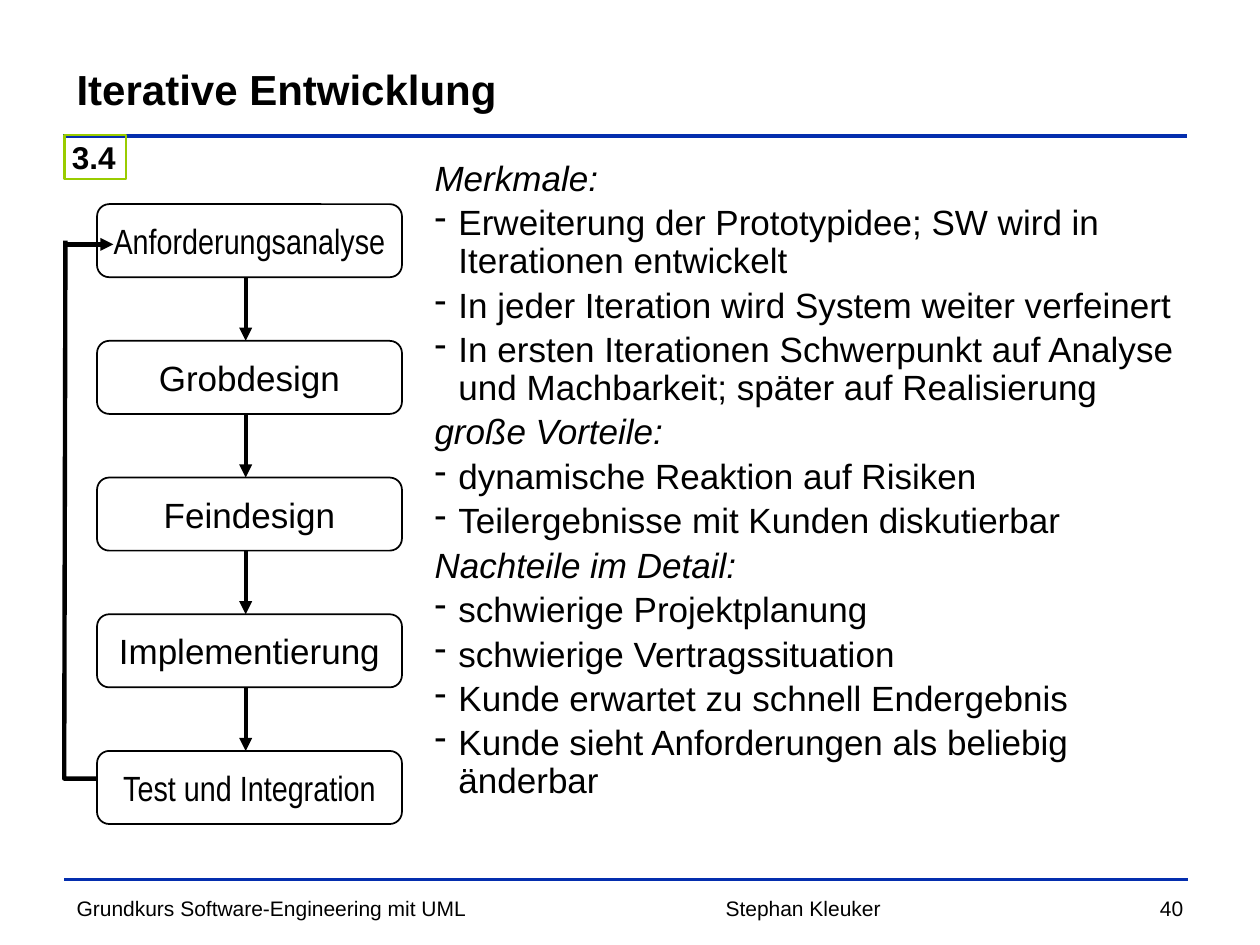
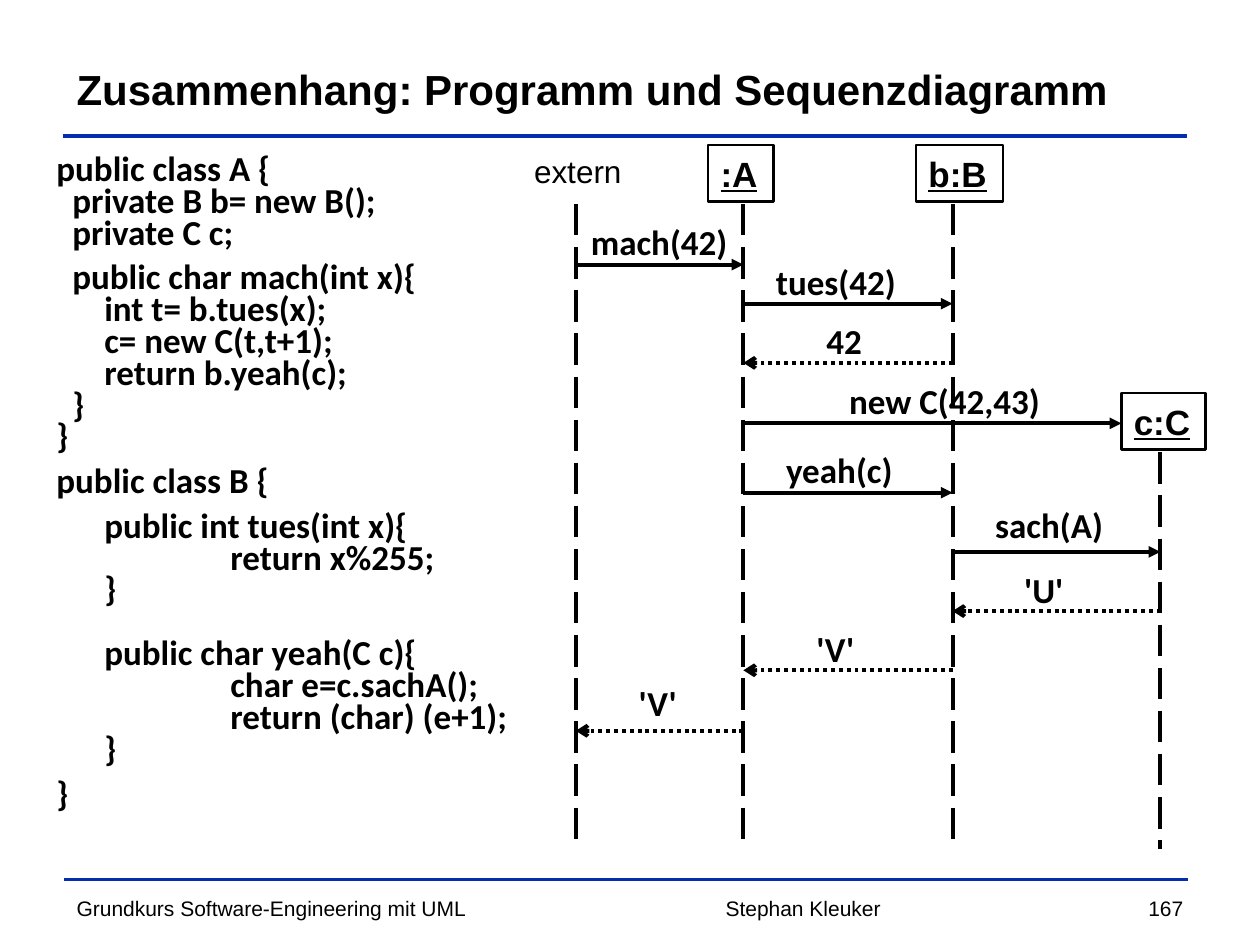
from collections import namedtuple
from lxml.etree import SubElement
from pptx import Presentation
from pptx.dml.color import RGBColor
from pptx.enum.dml import MSO_LINE
from pptx.enum.shapes import MSO_CONNECTOR, MSO_SHAPE
from pptx.enum.text import MSO_ANCHOR, PP_ALIGN
from pptx.oxml.ns import qn
from pptx.util import Inches, Pt

BLACK = RGBColor(0x00, 0x00, 0x00)
BLUE = RGBColor(0x04, 0x2E, 0xAE)
GREEN = RGBColor(0x99, 0xCC, 0x00)
WIDTH, HEIGHT = Inches(10), Inches(7.5)
UNIT = WIDTH / 100
GAP = 3.8

Box = namedtuple("Box", "x y w h")
TITLE = Box(5.1, 2.8, 89, 8.5)
FOOTER = Box(5.1, 70.6, 89.8, 2.9)
STEPS = Box(7.7, 16.2, 24.2, 49.2)
POINTS = Box(33.5, 12.3, 61.5, 57.5)
CODE = Box(3.5, 12.3, 45, 57.5)
CHART = Box(41.4, 11.5, 54.3, 55.9)

FLOW = [
    ("Anforderungsanalyse", "Arial Narrow"),
    ("Grobdesign", "Arial"),
    ("Feindesign", "Arial"),
    ("Implementierung", "Arial"),
    ("Test und Integration", "Arial Narrow"),
]

TRAITS = [
    ("Merkmale:", [
        "Erweiterung der Prototypidee; SW wird in Iterationen entwickelt",
        "In jeder Iteration wird System weiter verfeinert",
        "In ersten Iterationen Schwerpunkt auf Analyse und Machbarkeit; später auf Realisierung",
    ]),
    ("große Vorteile:", [
        "dynamische Reaktion auf Risiken",
        "Teilergebnisse mit Kunden diskutierbar",
    ]),
    ("Nachteile im Detail:", [
        "schwierige Projektplanung",
        "schwierige Vertragssituation",
        "Kunde erwartet zu schnell Endergebnis",
        "Kunde sieht Anforderungen als beliebig änderbar",
    ]),
]

INDENTS = [0, 1.26, 3.8, 13.8]
SMALL, LARGE = 11.1, 22.2
LINES = [
    (0, GAP, "public class A {"),
    (1, GAP, "private B b= new B();"),
    (1, GAP, "private C c;"),
    (1, SMALL, "public char mach(int x){"),
    (2, GAP, "int t= b.tues(x);"),
    (2, GAP, "c= new C(t,t+1);"),
    (2, GAP, "return b.yeah(c);"),
    (1, GAP, "}"),
    (0, GAP, "}"),
    (0, SMALL, "public class B {"),
    (2, SMALL, "public int tues(int x){"),
    (3, GAP, "return x%255;"),
    (2, GAP, "}"),
    (2, LARGE, "public char yeah(C c){"),
    (3, GAP, "char e=c.sachA();"),
    (3, GAP, "return (char) (e+1);"),
    (2, GAP, "}"),
    (0, SMALL, "}"),
]

LIVES = {"extern": 4.3, "A": 17.6, "B": 34.2, "C": 50.7}
HEADS = [
    (":A", 14.8, 0, 5.2),
    ("b:B", 31.3, 0, 6.9),
    ("c:C", 47.6, 19.7, 6.7),
]
CALLS = [
    ("extern", "A", 9.5, "mach(42)", 4.5, 4),
    ("A", "B", 12.6, "tues(42)", 19.2, 3.9),
    ("A", "C", 22.1, "new C(42,43)", 25, 4),
    ("A", "B", 27.6, "yeah(c)", 20, 4),
    ("B", "C", 32.3, "sach(A)", 36.6, 4.3),
]
REPLIES = [
    ("B", "A", 17.3, "42", 23.2, 3.9),
    ("C", "B", 37, "'U'", 38.9, 3.9),
    ("B", "A", 41.7, "'V'", 22.4, 3.9),
    ("A", "extern", 46.5, "'V'", 8.3, 4.4),
]


def grid(*marks):
    return [round(mark * UNIT) for mark in marks]


def style(para, size, font="Arial", bold=False, italic=False, under=False):
    for run in para.runs:
        face = run.font
        face.size, face.name = Pt(size), font
        face.bold, face.italic, face.underline = bold, italic, under
        face.color.rgb = BLACK


def write(shape, text, size, align=PP_ALIGN.LEFT, anchor=MSO_ANCHOR.TOP, **look):
    frame = shape.text_frame
    frame.word_wrap = True
    frame.margin_right = 0
    frame.vertical_anchor = anchor
    frame.text = text
    para = frame.paragraphs[0]
    para.alignment = align
    style(para, size, **look)
    return frame


def label(slide, box, text, size, **look):
    return write(slide.shapes.add_textbox(*grid(*box)), text, size, **look)


def panel(slide, box, color=BLACK, width=1.5, kind=MSO_SHAPE.RECTANGLE):
    shape = slide.shapes.add_shape(kind, *grid(*box))
    shape.shadow.inherit = False
    shape.fill.background()
    shape.line.color.rgb = color
    shape.line.width = Pt(width)
    return shape


def draw(slide, start, end, color=BLACK, width=2.25, dash=None, tip=None):
    link = slide.shapes.add_connector(MSO_CONNECTOR.STRAIGHT, *grid(*start, *end))
    link.line.color.rgb = color
    link.line.width = Pt(width)
    if dash:
        link.line.dash_style = dash
    if tip:
        SubElement(link.line._get_or_add_ln(), qn("a:tailEnd"), type=tip)
    SubElement(link._element.spPr, qn("a:effectLst"))


def indent(para, left, hang=0, mark=None):
    props = para._p.get_or_add_pPr()
    props.set("marL", str(grid(left)[0]))
    props.set("indent", str(grid(-hang)[0]))
    if mark:
        SubElement(props, qn("a:buChar"), char=mark)


def add_title(slide, box, text):
    label(slide, box, text, 24, anchor=MSO_ANCHOR.MIDDLE, bold=True)
    draw(slide, (box.x - 0.1, box.y + 8), (box.x + 89.1, box.y + 8), BLUE, 2)


def add_footer(slide, box, number):
    draw(slide, (box.x, box.y - 0.8), (box.x + 89.2, box.y - 0.8), BLUE, 2)
    label(slide, (box.x, box.y, 34.6, box.h),
          "Grundkurs Software-Engineering mit UML", 12)
    name = label(slide, (box.x + 48.8, box.y, 19.7, box.h), "Stephan Kleuker",
                 12, align=PP_ALIGN.CENTER)
    page = label(slide, (box.x + 66.2, box.y, 23.6, box.h), str(number),
                 12, align=PP_ALIGN.RIGHT)
    name.margin_right = page.margin_right = Inches(0.1)


def add_flow(slide, box):
    high = 5.8
    pitch = (box.h - high) / (len(FLOW) - 1)
    mid = box.x + 11.8
    for row, (text, font) in enumerate(FLOW):
        top = box.y + row * pitch
        step = panel(slide, (box.x, top, box.w, high), width=1,
                     kind=MSO_SHAPE.ROUNDED_RECTANGLE)
        frame = write(step, text, 20, PP_ALIGN.CENTER, MSO_ANCHOR.MIDDLE, font=font)
        frame.margin_left = 0
        if row:
            draw(slide, (mid, top - pitch + high), (mid, top), width=2.5, tip="triangle")
    edge = box.x - 2.6
    draw(slide, (edge, box.y + 3.2), (edge + 3.9, box.y + 3.2), width=2.5, tip="triangle")
    low = box.y + 45.6
    outline = slide.shapes.build_freeform(*grid(edge + 0.1, box.y + 2.9))
    outline.add_line_segments([grid(edge, low), grid(box.x, low)], close=False)
    loop = outline.convert_to_shape()
    loop.shadow.inherit = False
    loop.fill.background()
    loop.line.color.rgb = BLACK
    loop.line.width = Pt(2.5)


def add_points(slide, box):
    rows = [(text, head) for title, items in TRAITS
            for text, head in [(title, True)] + [(item, False) for item in items]]
    frame = label(slide, box, "\n".join(text for text, head in rows), 20)
    frame.margin_right = Inches(0.1)
    for para, (text, head) in zip(frame.paragraphs, rows):
        para.line_spacing = 0.9
        para.space_before = Pt(GAP)
        indent(para, 1.9, 1.9, None if head else "-")
        style(para, 20, italic=head)


def add_badge(slide, box, text):
    frame = write(panel(slide, box, GREEN), text, 18,
                  anchor=MSO_ANCHOR.MIDDLE, bold=True)
    frame.margin_left = Inches(0.06)
    frame.margin_top = frame.margin_bottom = Inches(0.01)


def add_code(slide, box):
    frame = label(slide, box, "\n".join(text for level, gap, text in LINES), 20)
    for para, (level, gap, text) in zip(frame.paragraphs, LINES):
        para.line_spacing = 0.6
        para.space_before = Pt(gap)
        indent(para, INDENTS[level])
        style(para, 20, font="Calibri", bold=True)


def add_calls(slide, box):
    for text, left, top, wide in HEADS:
        head = panel(slide, (box.x + left, box.y + top, wide, 4.5))
        write(head, text, 20, anchor=MSO_ANCHOR.MIDDLE, bold=True, under=True)
    label(slide, (box.x, box.y + 0.1, 9, 4), "extern", 18)
    for name, left in LIVES.items():
        top = 24.4 if name == "C" else 4.7
        draw(slide, (box.x + left, box.y + top), (box.x + left, box.y + box.h),
             dash=MSO_LINE.LONG_DASH)
    for group, dash, tip in ((CALLS, None, "triangle"),
                             (REPLIES, MSO_LINE.ROUND_DOT, "arrow")):
        for start, end, row, text, left, lift in group:
            goal = 47.6 if text.startswith("new") else LIVES[end]
            level = box.y + row
            draw(slide, (box.x + LIVES[start], level), (box.x + goal, level),
                 dash=dash, tip=tip)
            label(slide, (box.x + left, level - lift, 3 + 1.4 * len(text), 4.3),
                  text, 20, font="Calibri", bold=True)


def add_slide(deck, title, number):
    slide = deck.slides.add_slide(deck.slide_layouts[6])
    add_title(slide, TITLE, title)
    add_footer(slide, FOOTER, number)
    return slide


def main():
    deck = Presentation()
    deck.slide_width, deck.slide_height = WIDTH, HEIGHT
    slide = add_slide(deck, "Iterative Entwicklung", 40)
    add_points(slide, POINTS)
    add_flow(slide, STEPS)
    add_badge(slide, Box(5.1, 10.7, 4.9, 3.5), "3.4")
    slide = add_slide(deck, "Zusammenhang: Programm und Sequenzdiagramm", 167)
    add_code(slide, CODE)
    add_calls(slide, CHART)
    deck.save("out.pptx")


if __name__ == "__main__":
    main()
